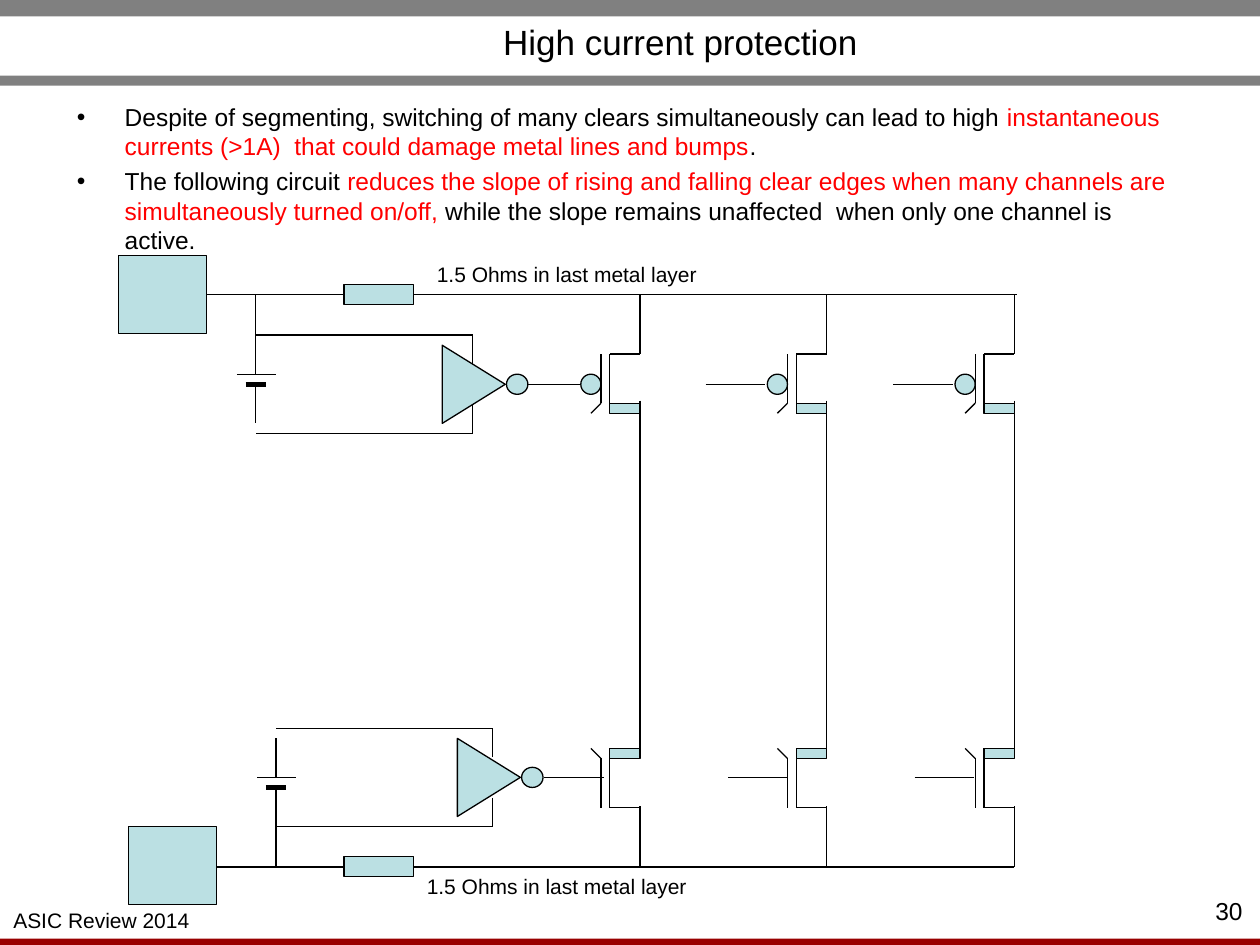
from dataclasses import dataclass
from typing import NamedTuple

import lxml.etree
import pptx
import pptx.dml.color
import pptx.enum.shapes
import pptx.enum.text
import pptx.oxml.ns
import pptx.util

EMU_PER_PX = 9144  # 100 px to the inch
COLORS = {"black": "000000", "red": "FF0000", "part": "BBE0E3",
          "gray": "808080", "footer": "990000"}
ALIGN = pptx.enum.text.PP_ALIGN
SHAPE = pptx.enum.shapes.MSO_SHAPE
TOP_RAIL, BOTTOM_RAIL = 234, 688
TOP_GATE, BOTTOM_GATE = 305, 617


class Span(NamedTuple):
    text: str
    color: str = "black"


@dataclass
class Channel:
    drain: int       # x of the vertical line
    top_lead: int    # left end of each gate lead
    bottom_lead: int


@dataclass
class Supply:
    """Battery with the inverter it feeds."""
    left: int
    gate: int
    battery_top: int
    triangle_left: int


BULLETS = [
    [Span("Despite of segmenting, switching of many clears simultaneously can lead to high "),
     Span("instantaneous currents (>1A)  that could damage metal lines and bumps", "red"),
     Span(".")],
    [Span("The following circuit "),
     Span("reduces the slope of rising and falling clear edges when many channels are "
          "simultaneously turned on/off, ", "red"),
     Span("while the slope remains unaffected  when only one channel is active.")],
]
CHANNELS = [Channel(805, 709, 726), Channel(656, 560, 578), Channel(508, 414, 432)]
SUPPLIES = [Supply(203, TOP_GATE, 266, 345), Supply(219, BOTTOM_GATE, 586, 357)]


def px(value: int) -> pptx.util.Emu:
    return pptx.util.Emu(value * EMU_PER_PX)


def rgb(name: str) -> pptx.dml.color.RGBColor:
    return pptx.dml.color.RGBColor.from_string(COLORS[name])


def format_font(font, size: int, color: str = "black") -> None:
    font.name, font.size = "Arial", pptx.util.Pt(size)
    font.color.rgb = rgb(color)


def place(shape, left: int, top: int, width: int, height: int) -> None:
    shape.left, shape.top = px(left), px(top)
    shape.width, shape.height = px(width), px(height)


def add_bar(page, top: int, height: int, color: str) -> None:
    bar = page.shapes.add_shape(SHAPE.RECTANGLE, 0, px(top), px(1000), px(height))
    bar.shadow.inherit = False
    bar.fill.solid()
    bar.fill.fore_color.rgb = rgb(color)
    bar.line.fill.background()


def add_part(page, left: int, top: int, width: int, height: int,
             kind=SHAPE.RECTANGLE, rotation: int = 0) -> None:
    part = page.shapes.add_shape(kind, px(left), px(top), px(width), px(height))
    part.rotation = rotation
    part.shadow.inherit = False
    part.fill.solid()
    part.fill.fore_color.rgb = rgb("part")
    part.line.color.rgb = rgb("black")
    part.line.width = pptx.util.Pt(0.75)


def add_wire(page, x1: int, y1: int, x2: int, y2: int, width: float = 0.75) -> None:
    wire = page.shapes.add_connector(pptx.enum.shapes.MSO_CONNECTOR.STRAIGHT,
                                     px(x1), px(y1), px(x2), px(y2))
    wire.line.color.rgb = rgb("black")
    wire.line.width = pptx.util.Pt(width)
    lxml.etree.SubElement(wire._element.spPr, pptx.oxml.ns.qn("a:effectLst"))


def add_label(page, text: str, left: int, top: int, width: int, height: int,
              size: int = 12, align=ALIGN.CENTER, wrap: bool = False) -> None:
    box = page.shapes.add_textbox(px(left), px(top), px(width), px(height))
    box.text_frame.word_wrap = wrap
    box.text_frame.text = text
    para = box.text_frame.paragraphs[0]
    para.alignment = align
    format_font(para.runs[0].font, size)


def add_transistor(page, drain: int, gate: int, down: int) -> None:
    """Draw a transistor; down is 1 with its drain below the gate, -1 above."""
    channel, plate = drain - 24, drain - 31
    source_y, bend_y, drain_y = (gate + down * step for step in (-24, 15, 23))
    add_wire(page, plate, source_y, plate, bend_y)
    add_wire(page, channel, source_y, channel, drain_y)
    add_wire(page, channel, source_y, drain, source_y)
    add_wire(page, channel, drain_y, drain, drain_y)
    add_wire(page, plate, bend_y, plate - 8, drain_y)
    add_part(page, channel, min(bend_y, drain_y), 24, 8)


def add_channel(page, channel: Channel) -> None:
    x = channel.drain
    add_part(page, x - 47, TOP_GATE - 8, 16, 16, SHAPE.OVAL)
    add_transistor(page, x, TOP_GATE, 1)
    add_transistor(page, x, BOTTOM_GATE, -1)
    add_wire(page, channel.top_lead, TOP_GATE, channel.top_lead + 47, TOP_GATE)
    add_wire(page, channel.bottom_lead, BOTTOM_GATE, channel.bottom_lead + 47, BOTTOM_GATE)
    for y1, y2 in ((TOP_RAIL, 258), (257, 281), (318, 601), (640, 664), (664, BOTTOM_RAIL)):
        add_wire(page, x, y1, x, y2)


def add_supply(page, supply: Supply) -> None:
    left, right, gate = supply.left, supply.left + 172, supply.gate
    # Inverter
    add_part(page, supply.triangle_left, gate - 25, 62, 50, SHAPE.ISOSCELES_TRIANGLE, 90)
    add_part(page, supply.triangle_left + 57, gate - 8, 17, 16, SHAPE.OVAL)
    # Supply lines above and below the inverter
    for side in (-1, 1):
        add_wire(page, right, gate + side * 16, right, gate + side * 39)
        add_wire(page, right, gate + side * 39, left, gate + side * 39)
    # Battery
    top = supply.battery_top
    add_wire(page, left, top, left, top + 31)
    add_wire(page, left - 15, top + 31, left + 16, top + 31)
    add_wire(page, left - 8, top + 39, left + 8, top + 39, 3)
    add_wire(page, left, top + 39, left, top + 70)


def fill_title(title) -> None:
    place(title, 130, 14, 820, 38)
    title.text_frame.text = "High current protection"
    title.text_frame.vertical_anchor = pptx.enum.text.MSO_ANCHOR.MIDDLE
    title.text_frame.auto_size = pptx.enum.text.MSO_AUTO_SIZE.NONE
    para = title.text_frame.paragraphs[0]
    para.alignment = ALIGN.CENTER
    format_font(para.runs[0].font, 20)


def fill_body(body) -> None:
    place(body, 51, 76, 900, 118)
    frame = body.text_frame
    frame.auto_size = pptx.enum.text.MSO_AUTO_SIZE.NONE
    for index, spans in enumerate(BULLETS):
        para = frame.add_paragraph() if index else frame.paragraphs[0]
        properties = para._p.get_or_add_pPr()
        properties.set("marL", str(px(38)))
        properties.set("indent", str(px(-38)))
        bullet = lxml.etree.SubElement(properties, pptx.oxml.ns.qn("a:buChar"))
        bullet.set("char", "•")
        para.space_before = pptx.util.Pt(3 if index else 0)
        for span in spans:
            run = para.add_run()
            run.text = span.text
            format_font(run.font, 14, span.color)


def main() -> None:
    deck = pptx.Presentation()
    deck.slide_width, deck.slide_height = px(1000), px(750)
    page = deck.slides.add_slide(deck.slide_layouts[1])

    # Page frame and text
    for top, height, color in ((745, 8, "footer"), (0, 13, "gray"), (60, 8, "gray")):
        add_bar(page, top, height, color)
    add_label(page, "ASIC Review 2014", 0, 715, 161, 30)
    add_label(page, "30", 949, 706, 47, 24, 14, ALIGN.RIGHT, True)
    fill_title(page.shapes.title)
    fill_body(page.placeholders[1])

    # Rails, with a tap to each battery
    for x1, x2 in ((164, 203), (203, 273), (327, 807)):
        add_wire(page, x1, TOP_RAIL, x2, TOP_RAIL)
    for x1, x2 in ((172, 211), (203, 273), (266, 805)):
        add_wire(page, x1, BOTTOM_RAIL, x2, BOTTOM_RAIL)
    add_wire(page, 203, TOP_RAIL, 203, 266)
    add_wire(page, 219, 656, 219, BOTTOM_RAIL)

    # Circuit
    for channel in CHANNELS:
        add_channel(page, channel)
    for supply in SUPPLIES:
        add_supply(page, supply)

    # Pads, resistors and their labels
    for pad_left, pad_top, rail, label_left, label_top in (
            (94, 203, TOP_RAIL, 336, 203), (102, 656, BOTTOM_RAIL, 328, 688)):
        add_part(page, pad_left, pad_top, 70, 62)
        add_part(page, 273, rail - 8, 55, 16)
        add_label(page, "1.5 Ohms in last metal layer", label_left, label_top, 228, 30)

    deck.save("out.pptx")


if __name__ == "__main__":
    main()
